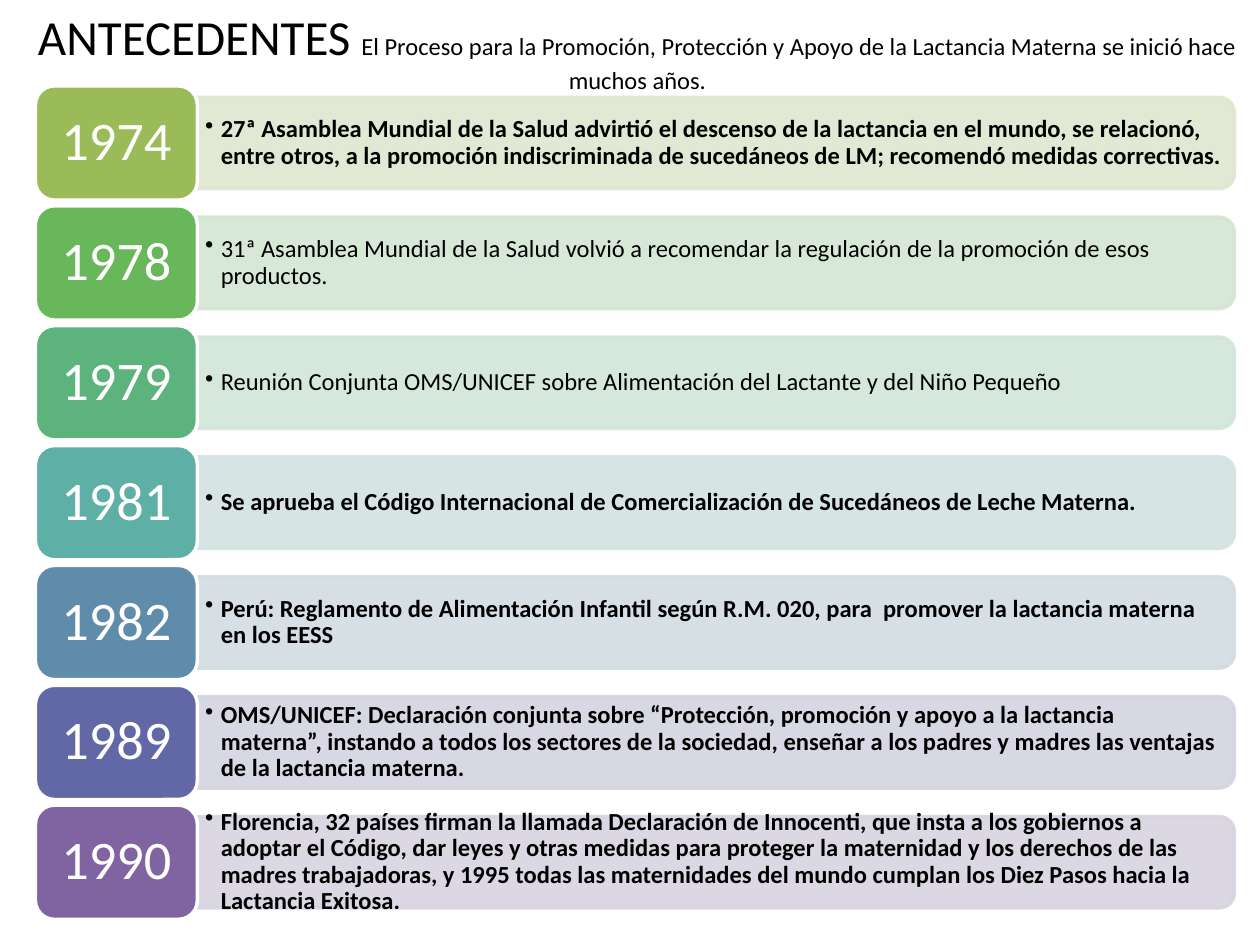
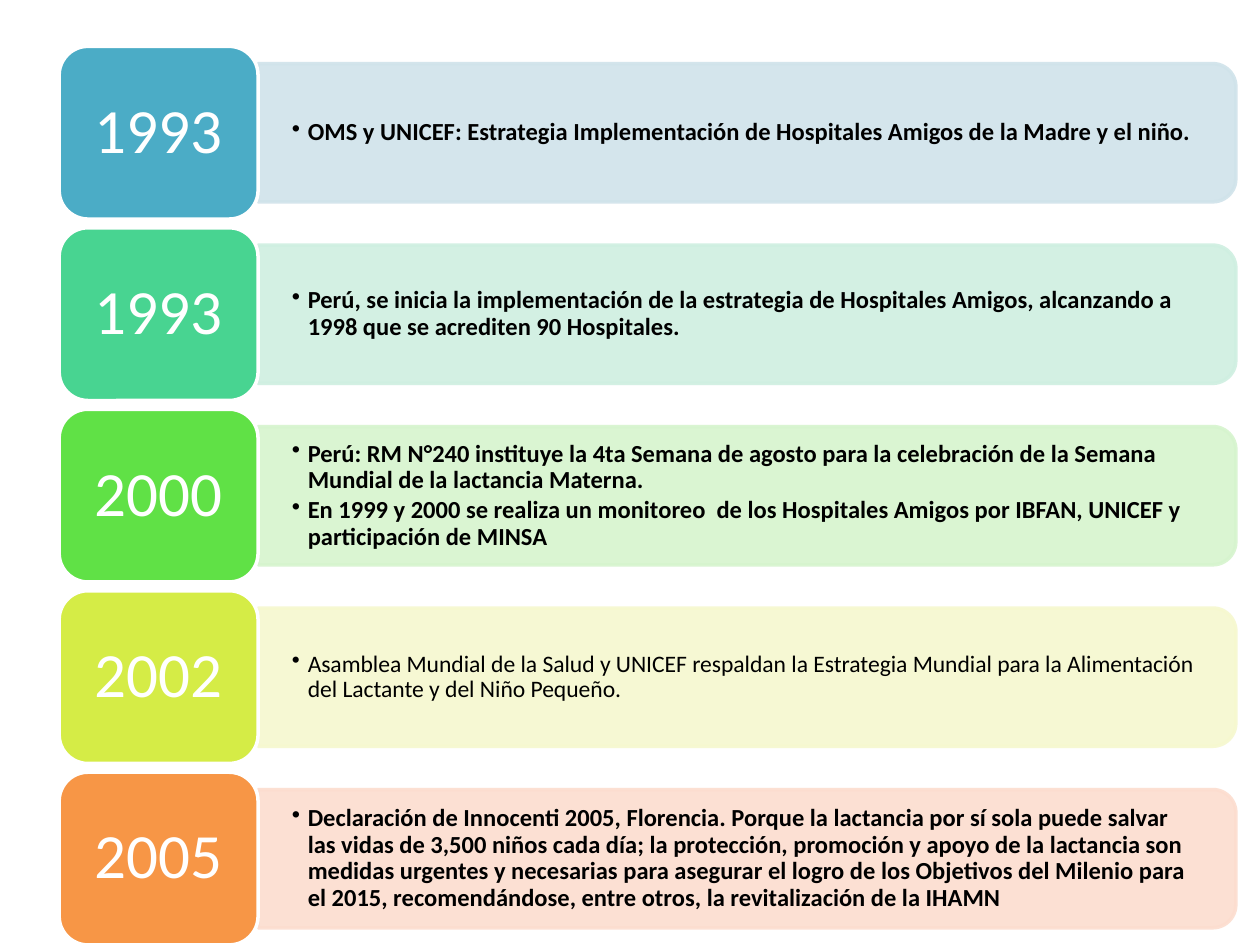
import pptx
import pptx.util
import pptx.dml.color
import pptx.enum.shapes
import pptx.enum.text
import pptx.oxml.ns
import lxml.etree

Pt = pptx.util.Pt
RGB = pptx.dml.color.RGBColor
SHAPE = pptx.enum.shapes.MSO_SHAPE
ALIGN = pptx.enum.text.PP_ALIGN
ANCHOR = pptx.enum.text.MSO_ANCHOR
qn = pptx.oxml.ns.qn

COLORS = {"text": "000000", "year": "FFFFFF", "outline": "FFFFFF"}

# Content
TITLE = [
    ("ANTECEDENTES ", 28),
    ("El Proceso para la Promoción, Protección y Apoyo de la Lactancia Materna "
     "se inició hace muchos años.", 14),
]

# Each row: year, year colour, band colour, text format, bullet texts
BOLD = {"size": Pt(14), "bold": True}
PLAIN = {"size": Pt(14), "bold": False}
SMALL = {"size": Pt(13.5), "bold": False}

TIMELINE_1974_1990 = [
    ("1974", "9BBB59", "DEE7D1", BOLD, [
        "27ª Asamblea Mundial de la Salud advirtió el descenso de la lactancia en el mundo, "
        "se relacionó, entre otros, a la promoción indiscriminada de sucedáneos de LM; "
        "recomendó medidas correctivas."]),
    ("1978", "69B75B", "D3E6D2", PLAIN, [
        "31ª Asamblea Mundial de la Salud volvió a recomendar la regulación de la promoción "
        "de esos productos."]),
    ("1979", "5CB37C", "D2E5D9", PLAIN, [
        "Reunión Conjunta OMS/UNICEF sobre Alimentación del Lactante y del Niño Pequeño"]),
    ("1981", "5EAFA6", "D2E3E2", BOLD, [
        "Se aprueba el Código Internacional de Comercialización de Sucedáneos de Leche Materna."]),
    ("1982", "608CAB", "D2DCE2", BOLD, [
        "Perú: Reglamento de Alimentación Infantil según R.M. 020, para  promover la lactancia "
        "materna en los EESS"]),
    ("1989", "6267A6", "D3D4E1", BOLD, [
        "OMS/UNICEF: Declaración conjunta sobre “Protección, promoción y apoyo a la lactancia "
        "materna”, instando a todos los sectores de la sociedad, enseñar a los padres y madres "
        "las ventajas de la lactancia materna."]),
    ("1990", "8064A2", "D8D3E0", BOLD, [
        "Florencia, 32 países firman la llamada Declaración de Innocenti, que insta a los "
        "gobiernos a adoptar el Código, dar leyes y otras medidas para proteger la maternidad "
        "y los derechos de las madres trabajadoras, y 1995 todas las maternidades del mundo "
        "cumplan los Diez Pasos hacia la Lactancia Exitosa."]),
]

TIMELINE_1993_2005 = [
    ("1993", "4BACC6", "D0E3EA", BOLD, [
        "OMS y UNICEF: Estrategia Implementación de Hospitales Amigos de la Madre y el niño."]),
    ("1993", "48D491", "CFEFE1", BOLD, [
        "Perú, se inicia la implementación de la estrategia de Hospitales Amigos, alcanzando a "
        "1998 que se acrediten 90 Hospitales."]),
    ("2000", "60E146", "D6F4CE", BOLD, [
        "Perú: RM N°240 instituye la 4ta Semana de agosto para la celebración de la Semana "
        "Mundial de la lactancia Materna.",
        "En 1999 y 2000 se realiza un monitoreo  de los Hospitales Amigos por IBFAN, UNICEF y "
        "participación de MINSA"]),
    ("2002", "D5EC46", "F6F8CF", SMALL, [
        "Asamblea Mundial de la Salud y UNICEF respaldan la Estrategia Mundial para la "
        "Alimentación del Lactante y del Niño Pequeño."]),
    ("2005", "F79646", "FCDDCF", BOLD, [
        "Declaración de Innocenti 2005, Florencia. Porque la lactancia por sí sola puede salvar "
        "las vidas de 3,500 niños cada día; la protección, promoción y apoyo de la lactancia son "
        "medidas urgentes y necesarias para asegurar el logro de los Objetivos del Milenio para "
        "el 2015, recomendándose, entre otros, la revitalización de la IHAMN"]),
]

# Geometry in points: year boxes, row pitch, bands and the text on them
GRID_1974_1990 = {
    "left": 20.2, "top": 49.1, "year_w": 92.6, "year_h": 65.3, "pitch": 68.5, "year_size": 31,
    "band_w": 592.6, "band_h": 52.2, "text_w": 590, "text_h": 47, "inset": (4.4, 2.2)}
GRID_1993_2005 = {
    "left": 33.8, "top": 26.5, "year_w": 113.7, "year_h": 98.7, "pitch": 103.7, "year_size": 36,
    "band_w": 558.7, "band_h": 79, "text_w": 554.8, "text_h": 71.3, "inset": (19.4, 9.8)}


def apply(obj, values):
    for name, value in values.items():
        setattr(obj, name, value)


def add_run(p, text, color, **font):
    r = p.add_run()
    r.text = text
    apply(r.font, {"name": "Calibri", **font})
    r.font.color.rgb = RGB.from_string(color)


def frame(tf, inset=(0, 0), anchor=ANCHOR.MIDDLE):
    x, y = map(Pt, inset)
    apply(tf, {"word_wrap": True, "vertical_anchor": anchor,
               "auto_size": pptx.enum.text.MSO_AUTO_SIZE.NONE,
               "margin_left": x, "margin_right": x, "margin_top": y, "margin_bottom": y})


def add_shape(s, kind, left, top, width, height, fill, line):
    sp = s.shapes.add_shape(kind, Pt(left), Pt(top), Pt(width), Pt(height))
    sp.shadow.inherit = False
    sp.fill.solid()
    sp.fill.fore_color.rgb = RGB.from_string(fill)
    sp.line.color.rgb = RGB.from_string(line)
    sp.line.width = Pt(2)
    return sp


def add_band(s, left, middle, width, height, color):
    # The rounded end faces right, so the shape is built upright and turned
    sp = add_shape(s, SHAPE.ROUND_2_SAME_RECTANGLE, left + (width - height) / 2,
                   middle - width / 2, height, width, color, color)
    sp.rotation = 90
    for clr in sp._element.spPr.iter(qn("a:srgbClr")):
        lxml.etree.SubElement(clr, qn("a:alpha"), val="90000")


def add_bullets(s, left, middle, grid, texts, font):
    sp = s.shapes.add_textbox(Pt(left), Pt(middle - grid["text_h"] / 2),
                              Pt(grid["text_w"]), Pt(grid["text_h"]))
    tf = sp.text_frame
    frame(tf, grid["inset"])
    for i, text in enumerate(texts):
        p = tf.add_paragraph() if i else tf.paragraphs[0]
        apply(p, {"line_spacing": 0.9, "space_after": Pt(2)})
        pPr = p._p.get_or_add_pPr()
        pPr.set("marL", str(Pt(9)))
        pPr.set("indent", str(-Pt(9)))
        lxml.etree.SubElement(pPr, qn("a:buChar"), char="•")
        add_run(p, text, COLORS["text"], **font)


def add_timeline(s, rows, grid):
    band_left = grid["left"] + grid["year_w"]
    for i, (year, year_color, band_color, font, texts) in enumerate(rows):
        top = grid["top"] + i * grid["pitch"]
        middle = top + grid["year_h"] / 2
        add_band(s, band_left, middle, grid["band_w"], grid["band_h"], band_color)
        add_bullets(s, band_left, middle, grid, texts, font)
        sp = add_shape(s, SHAPE.ROUNDED_RECTANGLE, grid["left"], top, grid["year_w"],
                       grid["year_h"], year_color, COLORS["outline"])
        frame(sp.text_frame)
        p = sp.text_frame.paragraphs[0]
        apply(p, {"alignment": ALIGN.CENTER, "line_spacing": 0.9})
        add_run(p, year, COLORS["year"], size=Pt(grid["year_size"]))


def add_title(s):
    sp = s.shapes.title
    apply(sp, {"left": Pt(8.6), "top": Pt(0), "width": Pt(711.4), "height": Pt(49)})
    frame(sp.text_frame, (7.2, 3.6), ANCHOR.TOP)
    p = sp.text_frame.paragraphs[0]
    p.alignment = ALIGN.CENTER
    for text, size in TITLE:
        add_run(p, text, COLORS["text"], size=Pt(size))


def main():
    prs = pptx.Presentation()
    apply(prs, {"slide_width": Pt(720), "slide_height": Pt(540)})
    title_only, blank = prs.slide_layouts[5], prs.slide_layouts[6]

    # Slide 1: 1974 to 1990
    s = prs.slides.add_slide(title_only)
    add_title(s)
    add_timeline(s, TIMELINE_1974_1990, GRID_1974_1990)

    # Slide 2: 1993 to 2005
    s = prs.slides.add_slide(blank)
    add_timeline(s, TIMELINE_1993_2005, GRID_1993_2005)

    prs.save("out.pptx")


if __name__ == "__main__":
    main()
